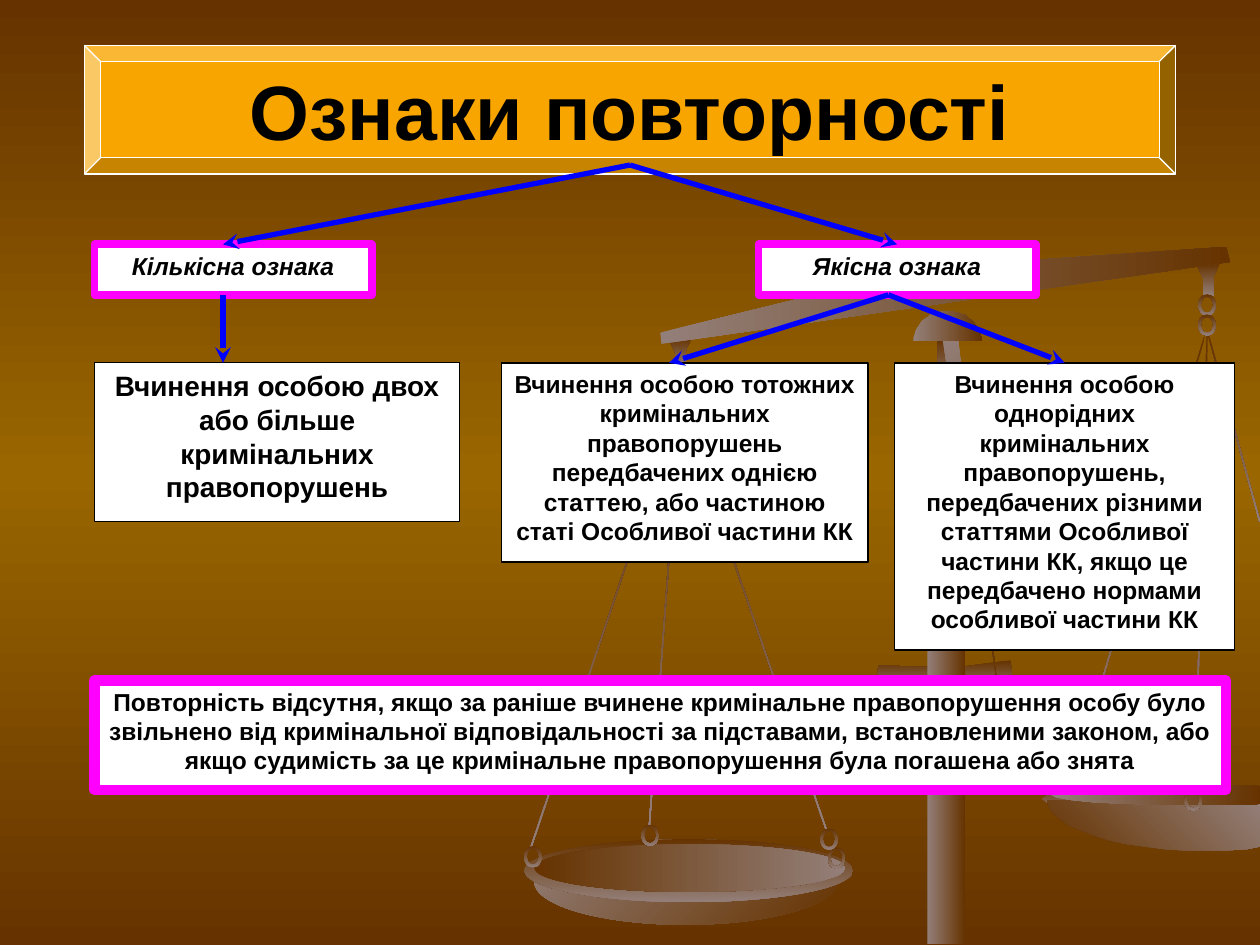
from copy import deepcopy
from math import cos, pi, sin
from lxml.etree import SubElement
from pptx import Presentation
from pptx.dml.color import RGBColor
from pptx.enum.shapes import MSO_CONNECTOR, MSO_SHAPE
from pptx.enum.text import MSO_ANCHOR, PP_ALIGN
from pptx.oxml.ns import qn
from pptx.util import Pt

# Grid: 1000 columns by 750 rows of square cells
UNIT = 9144
COLS, ROWS = 1000, 750
FONT = "Arial"
HUES = {"dark": "663300", "mid": "996600", "pale": "937F79", "gold": "F8A500",
        "white": "FFFFFF", "black": "000000", "pink": "FF00FF", "blue": "0000FF"}
RISE, FALL = ("dark", "pale"), ("pale", "dark")

# Scales: ropes as middle, length and turn; links and hooks as middles
ROPES = [(904, 440, 360, 16.6), (953, 440, 347, 1.5), (979, 340, 153, -15.4),
         (598, 492, 353, -19), (479, 500, 368, 18.6), (527, 490, 331, 4.2)]
LINKS = [(851, 617), (958, 242), (958, 258), (947, 620), (947, 635),
         (516, 663), (664, 681), (423, 680), (658, 666)]
LINK = (14, 17)
HOOKS = [(540, 268), (959, 209)]
BEAM = [(973, 196), (976, 208), (525, 273), (524, 264), (737, 212)]
BASE = [(697, 528), (757, 530), (802, 524), (804, 544), (733, 552), (696, 547)]
STRUT = [(791, 539), (748, 268), (760, 265)]

# Boxes: place, text, style
TITLE = "Ознаки повторності"
LEFT, SIGN, CASE = 75, 194, 288
WIDE, HIGH = 220, 40
STYLES = {"sign": (14, True, "pink", 4.5), "big": (16, False, "black", 0.75),
          "case": (14, False, "black", 0.75), "note": (14, False, "pink", 6)}
BOXES = {
    "count": ((LEFT, SIGN, WIDE, HIGH), "Кількісна ознака", "sign"),
    "kind": ((602, SIGN, WIDE, HIGH), "Якісна ознака", "sign"),
    "two": ((LEFT, CASE, 290, 126),
            "Вчинення особою двох або більше кримінальних правопорушень", "big"),
    "same": ((398, CASE, 291, 158),
             "Вчинення особою тотожних кримінальних правопорушень передбачених однією "
             "статтею, або частиною статі Особливої частини КК", "case"),
    "like": ((710, CASE, 270, 228),
             "Вчинення особою однорідних кримінальних правопорушень, передбачених різними "
             "статтями Особливої частини КК, якщо це передбачено нормами особливої "
             "частини КК", "case"),
    "none": ((LEFT, 540, 898, 87),
             "Повторність відсутня, якщо за раніше вчинене кримінальне правопорушення особу "
             "було звільнено від кримінальної відповідальності за підставами, встановленими "
             "законом, або якщо судимість за це кримінальне правопорушення була погашена "
             "або знята", "note"),
}
# Arrows: start, end, box joined at its top
FOOT = SIGN + HIGH
TOP, FORK, STEM = (500, 131), (705, FOOT), 177
ARROWS = [(TOP, (STEM, SIGN), None), (TOP, (712, SIGN), "kind"),
          ((STEM, FOOT), (STEM, CASE), None), (FORK, (531, CASE), None),
          (FORK, (845, CASE), "like")]
FORMS = {"rect": MSO_SHAPE.RECTANGLE, "oval": MSO_SHAPE.OVAL,
         "ring": MSO_SHAPE.DONUT, "bevel": MSO_SHAPE.BEVEL}


def hue(name):
    return RGBColor.from_string(HUES[name])


def cells(nums):
    return [round(n * UNIT) for n in nums]


def blend(fill, names, angle):
    fill.gradient()
    fill.gradient_angle = (360 - angle) % 360
    for spot, (stop, name) in enumerate(zip(fill.gradient_stops, names)):
        stop.color.rgb = hue(name)
        stop.position = spot


def add(kind, place):
    if kind == "free":
        pen = shapes.build_freeform(*place[0], scale=UNIT)
        pen.add_line_segments(place[1:], close=True)
        shape = pen.convert_to_shape()
    else:
        shape = shapes.add_shape(FORMS[kind], *cells(place))
    shape.shadow.inherit = False
    return shape


def part(kind, place, names=RISE, angle=90, turn=0):
    shape = add(kind, place)
    blend(shape.fill, names, angle)
    shape.line.fill.background()
    shape.rotation = turn
    return shape


def arc(x, y, wide, high, start, end, steps=24):
    """Points on an ellipse, in half turns, cut at the slide's edge."""
    turns = [pi * (start + (end - start) * n / steps) for n in range(steps + 1)]
    return [(min(COLS, round(x + wide * cos(t))), round(y + high * sin(t)))
            for t in turns]


def paint(shape, fill, line, width):
    shape.fill.solid()
    shape.fill.fore_color.rgb = hue(fill)
    shape.line.color.rgb = hue(line)
    shape.line.width = Pt(width)


def write(shape, text, size, slant, wrap, anchor):
    frame = shape.text_frame
    frame.text = text
    frame.word_wrap = wrap
    frame.vertical_anchor = anchor
    para = frame.paragraphs[0]
    para.alignment = PP_ALIGN.CENTER
    font = para.runs[0].font
    font.name, font.size, font.bold, font.italic = FONT, Pt(size), True, slant
    font.color.rgb = hue("black")


deck = Presentation()
deck.slide_width, deck.slide_height = cells((COLS, ROWS))
slide = deck.slides.add_slide(deck.slide_layouts[6])
shapes = slide.shapes

# Background, with a lighter band across the middle
back = slide.background.fill
blend(back, ("dark", "dark"), 90)
first = slide.background._cSld.find(".//" + qn("a:gs"))
first.addnext(deepcopy(first))
band = back.gradient_stops[1]
band.color.rgb = hue("mid")
band.position = 0.5

# Scales: ropes, base, right pan, hooks, beam
for x, y, long, turn in ROPES:
    part("rect", (x, y - long / 2, 1, long), turn=turn)
part("free", BASE)
part("free", arc(957, 634, 130, 11, 0, 2))
part("free", arc(957, 635, 126, 40, 0, 1), angle=315)
part("free", arc(957, 631, 123, 8, 0, 2), FALL, 0)
for x, y in HOOKS:
    part("free", [(x - 9, y + 2), (x + 9, y), (x + 4, y + 11), (x + 4, y + 26),
                  (x - 4, y + 26), (x - 4, y + 12)])
part("free", BEAM, FALL, 0)

# Scales: left pan, links, post
part("oval", (424, 666, 240, 68), FALL, 45)
part("oval", (416, 666, 261, 50))
part("oval", (424, 670, 247, 38), angle=0)
for x, y in LINKS:
    wide, high = LINK
    part("ring", (x - wide / 2, y - high / 2, wide, high)).adjustments[0] = 0.15
part("rect", (736, 308, 30, 441), FALL, 0)
part("rect", (744, 268, 13, 42))
part("free", STRUT, FALL, 45)
part("free", arc(752, 271, 27, 24, 1, 2), FALL, 0)

# Title
head = add("bevel", (67, 36, 866, 102))
paint(head, "gold", "white", 0.75)
write(head, TITLE, 44, False, False, MSO_ANCHOR.MIDDLE)

# Boxes
made = {}
for name, (place, text, style) in BOXES.items():
    size, slant, line, width = STYLES[style]
    made[name] = box = add("rect", place)
    paint(box, "white", line, width)
    write(box, text, size, slant, True, MSO_ANCHOR.TOP)

# Arrows
for start, end, goal in ARROWS:
    arrow = shapes.add_connector(MSO_CONNECTOR.STRAIGHT, *cells(start + end))
    if goal:
        arrow.end_connect(made[goal], 0)
    arrow.line.color.rgb = hue("blue")
    arrow.line.width = Pt(3)
    SubElement(arrow.line._get_or_add_ln(), qn("a:tailEnd"), type="stealth")
    SubElement(arrow._element.spPr, qn("a:effectLst"))

deck.save("out.pptx")
